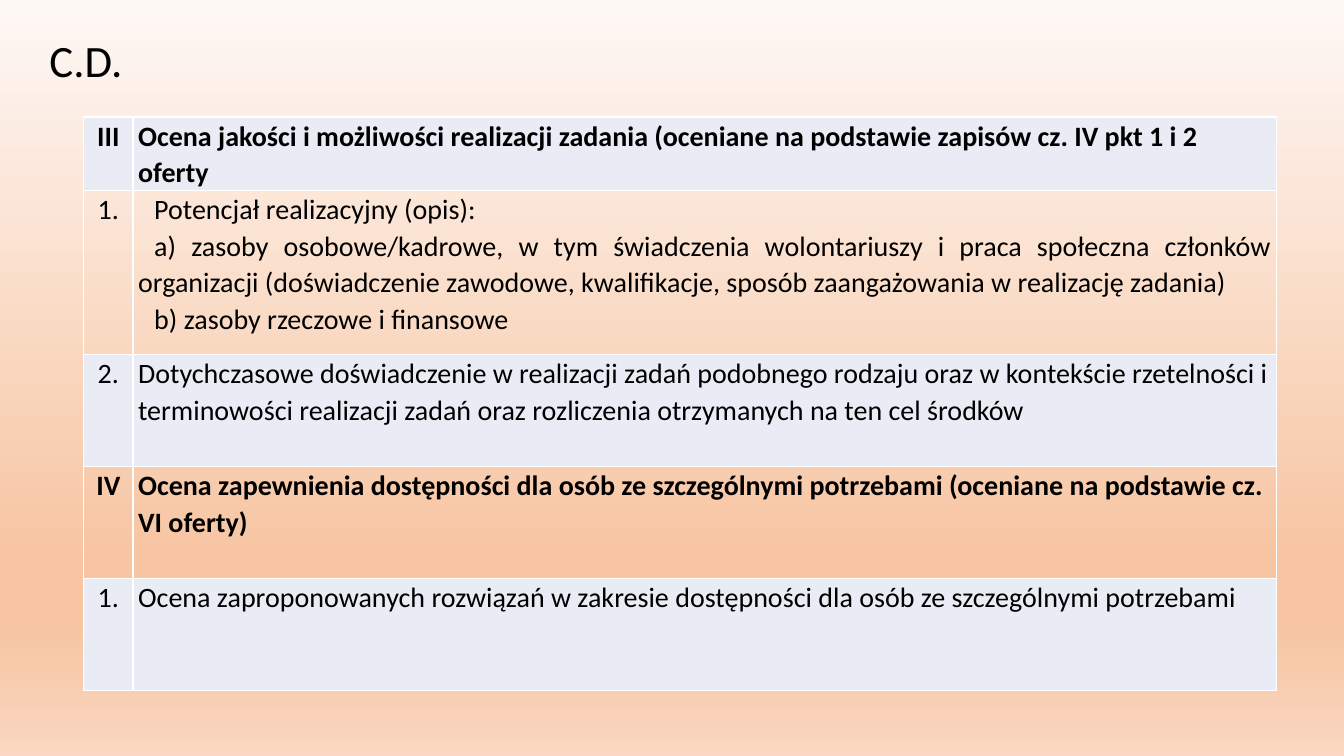
from lxml.etree import SubElement
from pptx import Presentation
from pptx.dml.color import RGBColor
from pptx.enum.text import MSO_ANCHOR, PP_ALIGN as ALIGN
from pptx.oxml.ns import qn
from pptx.util import Emu, Inches, Pt

COLORS = {"text": "000000", "band": "E9EBF5", "border": "FFFFFF"}
BACKGROUND_STOPS = [(0, "FEF8F5"), (74, "F7C5A2"), (83, "F7C5A2"), (100, "FAD8C1")]
COLUMN_WIDTHS = [0.49, 11.34]
ROW_HEIGHTS = [0.65, 1.63, 1.11, 1.11, 1.11]

# Number, paragraphs, bold, alignment, first-line indent
ROWS = [
    ("III", ["Ocena jakości i możliwości realizacji zadania (oceniane na podstawie "
             "zapisów cz. IV pkt 1 i 2 oferty"], True, ALIGN.LEFT, 0),
    ("1.", ["Potencjał realizacyjny (opis):",
            "a) zasoby osobowe/kadrowe, w tym świadczenia wolontariuszy i praca społeczna "
            "członków organizacji (doświadczenie zawodowe, kwalifikacje, sposób "
            "zaangażowania w realizację zadania)",
            "b) zasoby rzeczowe i finansowe"], False, ALIGN.JUSTIFY, 0.16),
    ("2.", ["Dotychczasowe doświadczenie w realizacji zadań podobnego rodzaju oraz "
            "w kontekście rzetelności i terminowości realizacji zadań oraz rozliczenia "
            "otrzymanych na ten cel środków"], False, ALIGN.LEFT, 0),
    ("IV", ["Ocena zapewnienia dostępności dla osób ze szczególnymi potrzebami "
            "(oceniane na podstawie cz. VI oferty)"], True, ALIGN.LEFT, 0),
    ("1.", ["Ocena zaproponowanych rozwiązań w zakresie dostępności dla osób "
            "ze szczególnymi potrzebami"], False, ALIGN.JUSTIFY, 0),
]


def format_paragraph(paragraph, size, bold, **layout):
    for name, value in {"name": "Calibri", "size": Pt(size), "bold": bold}.items():
        setattr(paragraph.font, name, value)
    paragraph.font.color.rgb = RGBColor.from_string(COLORS["text"])
    for name, value in layout.items():
        setattr(paragraph, name, value)


def add_borders(cell):
    properties = cell._tc.get_or_add_tcPr()
    for position, side in enumerate(("lnL", "lnR", "lnT", "lnB")):
        line = SubElement(properties, qn(f"a:{side}"), w=str(Pt(1)))
        fill = SubElement(line, qn("a:solidFill"))
        SubElement(fill, qn("a:srgbClr"), val=COLORS["border"])
        properties.insert(position, line)


presentation = Presentation()
presentation.slide_width, presentation.slide_height = Inches(13.33), Inches(7.5)
slide = presentation.slides.add_slide(presentation.slide_layouts[5])

# Background gradient from top to bottom
background = slide.background.fill
background.gradient()
background.gradient_angle = 270
stops = next(slide.element.iter(qn("a:gsLst")))
for stop in list(stops):
    stops.remove(stop)
for percent, color in BACKGROUND_STOPS:
    stop = SubElement(stops, qn("a:gs"), pos=str(percent * 1000))
    SubElement(stop, qn("a:srgbClr"), val=color)

# Title
title = slide.shapes.title
for name, value in {"left": 0.39, "top": 0.4, "width": 12.02, "height": 0.45}.items():
    setattr(title, name, Inches(value))
title.text_frame.text = "C.D."
title.text_frame.vertical_anchor = MSO_ANCHOR.MIDDLE
format_paragraph(title.text_frame.paragraphs[0], 32, False,
                 alignment=ALIGN.LEFT, line_spacing=0.9)

# Table grid
table = slide.shapes.add_table(
    len(ROWS), len(COLUMN_WIDTHS), Inches(0.83), Inches(1.16),
    Inches(sum(COLUMN_WIDTHS)), Inches(sum(ROW_HEIGHTS))).table
table.first_row = table.horz_banding = False
for column, width in zip(table.columns, COLUMN_WIDTHS):
    column.width = Inches(width)
for row, height in zip(table.rows, ROW_HEIGHTS):
    row.height = Inches(height)

# Table cells, every other row banded
for row_index, (number, texts, bold, alignment, indent) in enumerate(ROWS):
    contents = [([number], ALIGN.CENTER, 0), (texts, alignment, indent)]
    for column_index, (lines, align, first_indent) in enumerate(contents):
        cell = table.cell(row_index, column_index)
        cell.margin_left = cell.margin_right = Inches(0.05)
        cell.margin_top = cell.margin_bottom = Emu(0)
        if row_index % 2 == 0:
            cell.fill.solid()
            cell.fill.fore_color.rgb = RGBColor.from_string(COLORS["band"])
        else:
            cell.fill.background()
        add_borders(cell)
        cell.text_frame.text = "\n".join(lines)
        for paragraph in cell.text_frame.paragraphs:
            format_paragraph(paragraph, 20, bold, alignment=align, line_spacing=1.07,
                             space_after=Pt(0 if first_indent else 8))
            if first_indent:
                paragraph._p.get_or_add_pPr().set("indent", str(Inches(first_indent)))

presentation.save("out.pptx")
